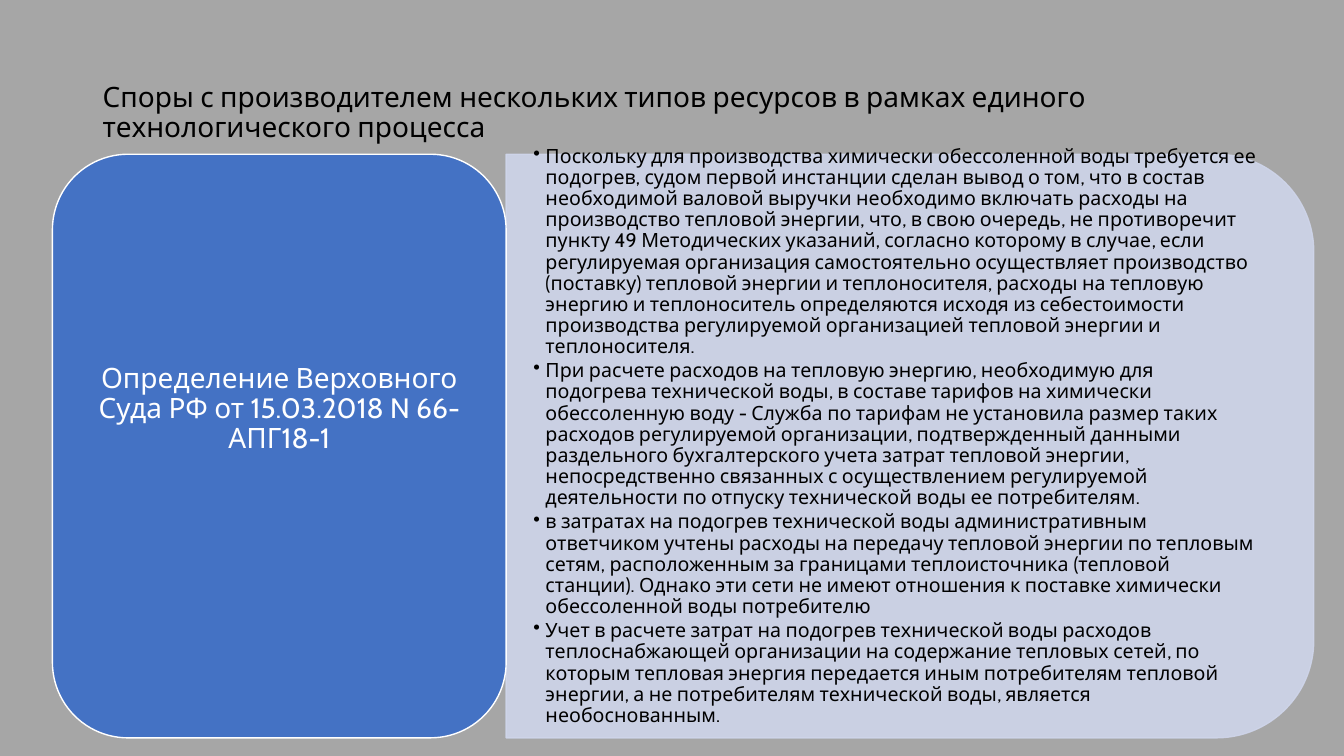
from lxml.etree import SubElement
from pptx import Presentation
from pptx.dml.color import RGBColor
from pptx.enum.shapes import MSO_SHAPE as Form
from pptx.enum.text import MSO_ANCHOR as Anchor, PP_ALIGN as Align
from pptx.oxml.ns import qn
from pptx.util import Inches, Pt

GREY = RGBColor(0xA6, 0xA6, 0xA6)
BLUE = RGBColor(0x44, 0x72, 0xC4)
PALE = RGBColor(0xCF, 0xD5, 0xEA)
WHITE = RGBColor(0xFF, 0xFF, 0xFF)
BLACK = RGBColor(0, 0, 0)

TITLE = "Споры с производителем нескольких типов ресурсов в рамках единого технологического процесса"
CASE = "Определение Верховного Суда РФ от 15.03.2018 N 66-АПГ18-1"
POINTS = [
    "Поскольку для производства химически обессоленной воды требуется ее подогрев, судом первой "
    "инстанции сделан вывод о том, что в состав необходимой валовой выручки необходимо включать "
    "расходы на производство тепловой энергии, что, в свою очередь, не противоречит пункту 49 "
    "Методических указаний, согласно которому в случае, если регулируемая организация "
    "самостоятельно осуществляет производство (поставку) тепловой энергии и теплоносителя, расходы "
    "на тепловую энергию и теплоноситель определяются исходя из себестоимости производства "
    "регулируемой организацией тепловой энергии и теплоносителя.",
    "При расчете расходов на тепловую энергию, необходимую для подогрева технической воды, в составе "
    "тарифов на химически обессоленную воду - Служба по тарифам не установила размер таких расходов "
    "регулируемой организации, подтвержденный данными раздельного бухгалтерского учета затрат "
    "тепловой энергии, непосредственно связанных с осуществлением регулируемой деятельности по "
    "отпуску технической воды ее потребителям.",
    "в затратах на подогрев технической воды административным ответчиком учтены расходы на передачу "
    "тепловой энергии по тепловым сетям, расположенным за границами теплоисточника (тепловой "
    "станции). Однако эти сети не имеют отношения к поставке химически обессоленной воды потребителю",
    "Учет в расчете затрат на подогрев технической воды расходов теплоснабжающей организации на "
    "содержание тепловых сетей, по которым тепловая энергия передается иным потребителям тепловой "
    "энергии, а не потребителям технической воды, является необоснованным.",
]


class Deck:
    """One slide whose places are given in percent of its width and height."""

    font = "Cabin"
    lead = 0.9

    def __init__(self):
        self.show = Presentation()
        self.show.slide_width, self.show.slide_height = Inches(13.33), Inches(7.5)
        self.slide = self.show.slides.add_slide(self.show.slide_layouts[6])
        back = self.slide.background.fill
        back.solid()
        back.fore_color.rgb = GREY

    def place(self, left, top, width, height):
        wide, high = self.show.slide_width / 100, self.show.slide_height / 100
        return [int(n) for n in (left * wide, top * high, width * wide, height * high)]

    def panel(self, form, spot, fill, edge, alpha=100, turned=False):
        """Draw a shape; a turned one fills its spot after a quarter turn."""
        x, y, w, h = self.place(*spot)
        if turned:
            x, y, w, h = x + (w - h) // 2, y + (h - w) // 2, h, w
        shape = self.slide.shapes.add_shape(form, x, y, w, h)
        shape.rotation = 90 if turned else 0
        shape.shadow.inherit = False
        shape.fill.solid()
        shape.fill.fore_color.rgb = fill
        shape.line.color.rgb = edge
        shape.line.width = Pt(1)
        if alpha < 100:
            for tint in shape._element.spPr.iter(qn("a:srgbClr")):
                SubElement(tint, qn("a:alpha"), val=str(alpha * 1000))

    def text(self, spot, lines, size, color, inset=(0.1, 0.05), align=Align.LEFT, after=0, bullet=False):
        frame = self.slide.shapes.add_textbox(*self.place(*spot)).text_frame
        frame.word_wrap = True
        frame.vertical_anchor = Anchor.MIDDLE
        frame.margin_left = frame.margin_right = Inches(inset[0])
        frame.margin_top = frame.margin_bottom = Inches(inset[1])
        frame.text = "\n".join(lines)
        for para in frame.paragraphs:
            para.alignment = align
            para.line_spacing = self.lead
            para.space_after = Pt(after)
            if bullet:
                self.bullet(para)
            for run in para.runs:
                run.font.name = self.font
                run.font.size = Pt(size)
                run.font.color.rgb = color

    def bullet(self, para):
        props = para._p.get_or_add_pPr()
        props.set("marL", str(Inches(0.12)))
        props.set("indent", str(-Inches(0.12)))
        SubElement(props, qn("a:buChar"), char="•")


def main():
    deck = Deck()
    top, high, left, split, right = 20.4, 77.2, 3.9, 37.66, 97.75
    deck.text((6.9, 5.33, 86.25, 19.33), [TITLE], 20, BLACK)
    deck.panel(Form.ROUND_2_SAME_RECTANGLE, (split, top, right - split, high),
               PALE, PALE, alpha=90, turned=True)
    deck.text((split, 22.93, 58, 69.6), POINTS, 14, BLACK,
              inset=(0.27, 0.14), after=2, bullet=True)
    deck.panel(Form.ROUNDED_RECTANGLE, (left, top, split - left, high), BLUE, WHITE)
    deck.text((5.55, 23.33, 30.46, 61.6), [CASE], 20, WHITE,
              inset=(0.08, 0.04), align=Align.CENTER)
    deck.show.save("out.pptx")


if __name__ == "__main__":
    main()
